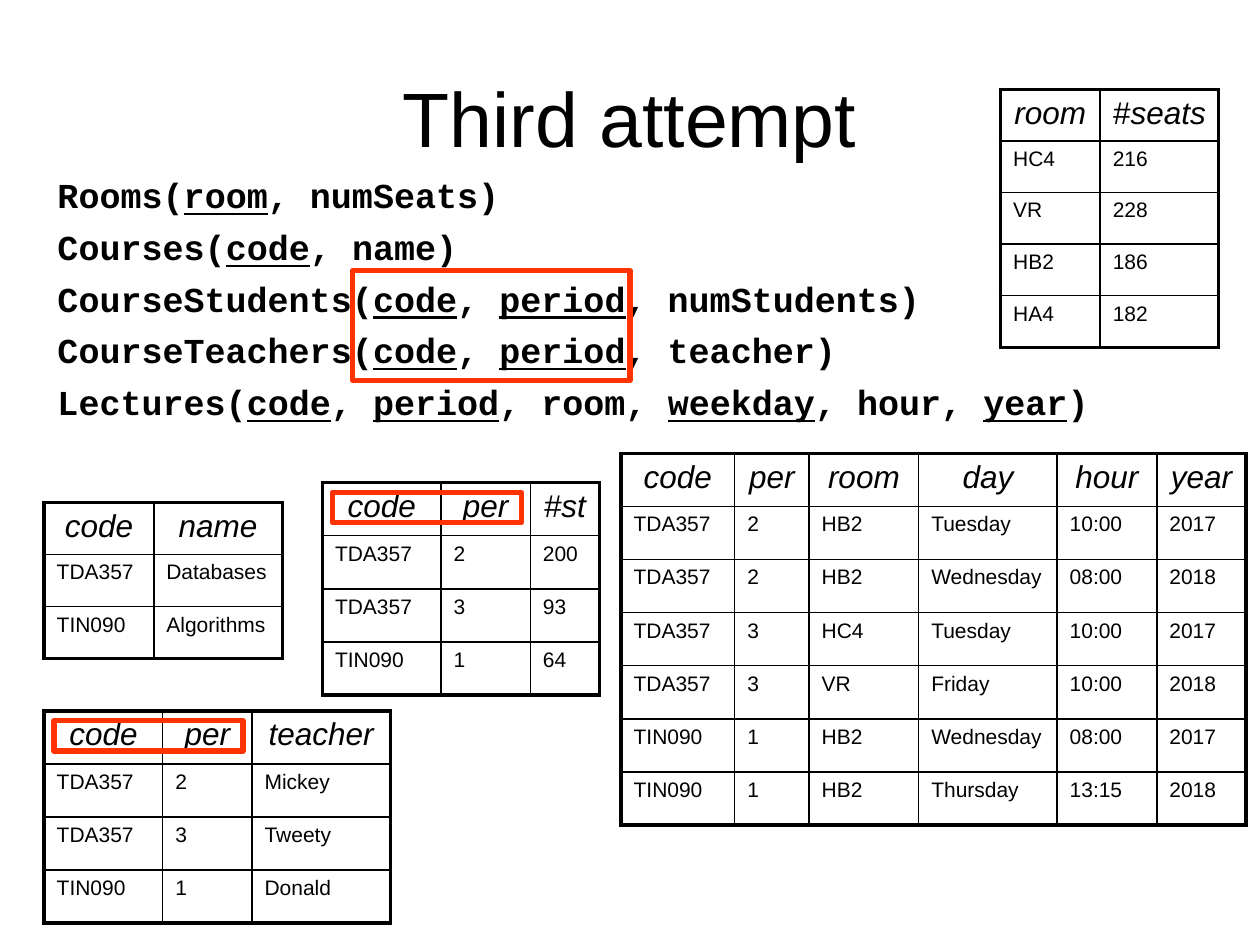
from lxml.etree import SubElement
from pptx import Presentation
from pptx.dml.color import RGBColor
from pptx.enum.shapes import MSO_SHAPE
from pptx.enum.text import MSO_ANCHOR, PP_ALIGN
from pptx.oxml.ns import qn
from pptx.util import Cm, Pt

BLACK = RGBColor(0x00, 0x00, 0x00)
RED = RGBColor(0xFF, 0x33, 0x00)
THIN, THICK = Pt(1), Pt(2.25)

SCHEMA = [
    "Rooms(_room_, numSeats)",
    "Courses(_code_, name)",
    "CourseStudents(_code_, _period_, numStudents)",
    "CourseTeachers(_code_, _period_, teacher)",
    "Lectures(_code_, _period_, room, _weekday_, hour, _year_)",
]

ROOMS = [
    ("_#_seats", ),
]
ROOMS = [
    ("room", "_#_seats"),
    ("HC4", "216"),
    ("VR", "228"),
    ("HB2", "186"),
    ("HA4", "182"),
]
COURSES = [
    ("code", "name"),
    ("TDA357", "Databases"),
    ("TIN090", "Algorithms"),
]
STUDENTS = [
    ("code", "per", "#st"),
    ("TDA357", "2", "200"),
    ("TDA357", "3", "93"),
    ("TIN090", "1", "64"),
]
TEACHERS = [
    ("code", "per", "teacher"),
    ("TDA357", "2", "Mickey"),
    ("TDA357", "3", "Tweety"),
    ("TIN090", "1", "Donald"),
]
LECTURES = [
    ("code", "per", "room", "day", "hour", "year"),
    ("TDA357", "2", "HB2", "Tuesday", "10:00", "2017"),
    ("TDA357", "2", "HB2", "Wednesday", "08:00", "2018"),
    ("TDA357", "3", "HC4", "Tuesday", "10:00", "2017"),
    ("TDA357", "3", "VR", "Friday", "10:00", "2018"),
    ("TIN090", "1", "HB2", "Wednesday", "08:00", "2017"),
    ("TIN090", "1", "HB2", "Thursday", "13:15", "2018"),
]


def add_run(paragraph, text, size, font_name="Arial", bold=False, italic=False, underline=False):
    run = paragraph.add_run()
    run.text = text
    font = run.font
    font.name, font.size, font.color.rgb = font_name, Pt(size), BLACK
    font.bold, font.italic, font.underline = bold, italic, underline


def split_marked(text):
    return [(part, index % 2 == 1) for index, part in enumerate(text.split("_")) if part]


def add_text_frame(slide, left, top, width, height):
    text_frame = slide.shapes.add_textbox(Cm(left), Cm(top), Cm(width), Cm(height)).text_frame
    text_frame.word_wrap = True
    return text_frame


def add_title(slide, left, top, width, height):
    text_frame = add_text_frame(slide, left, top, width, height)
    text_frame.vertical_anchor = MSO_ANCHOR.MIDDLE
    paragraph = text_frame.paragraphs[0]
    paragraph.alignment = PP_ALIGN.CENTER
    add_run(paragraph, "Third attempt", 44)


def add_schema(slide, left, top, width, height):
    text_frame = add_text_frame(slide, left, top, width, height)
    for index, relation in enumerate(SCHEMA):
        paragraph = text_frame.add_paragraph() if index else text_frame.paragraphs[0]
        paragraph.space_before = Pt(5.5)
        properties = paragraph._p.get_or_add_pPr()
        properties.set("marL", str(Cm(0.95)))
        properties.set("indent", str(Cm(-0.95)))
        for text, is_key in split_marked(relation):
            add_run(paragraph, text, 20, "Courier New", bold=True, underline=is_key)


def set_borders(cell, outer_sides):
    properties = cell._tc.get_or_add_tcPr()
    for side in "LRTB":
        line = SubElement(properties, qn(f"a:ln{side}"), w=str(THICK if side in outer_sides else THIN))
        fill = SubElement(line, qn("a:solidFill"))
        SubElement(fill, qn("a:srgbClr"), val=str(BLACK))


def add_key_mark(slide, left, top, width, height):
    shape = slide.shapes.add_shape(MSO_SHAPE.RECTANGLE, Cm(left), Cm(top), Cm(width), Cm(height))
    shape.shadow.inherit = False
    shape.fill.background()
    shape.line.color.rgb = RED
    shape.line.width = Pt(3)


def add_relation(slide, left, top, widths, row_height, rows):
    frame = slide.shapes.add_table(
        len(rows), len(widths), Cm(left), Cm(top), Cm(sum(widths)), Cm(row_height * len(rows)))
    table = frame.table
    table.first_row = table.horz_banding = False
    for column, width in zip(table.columns, widths):
        column.width = Cm(width)
    for row_index, values in enumerate(rows):
        table.rows[row_index].height = Cm(row_height)
        for column_index, value in enumerate(values):
            cell = table.cell(row_index, column_index)
            edges = {
                "L": column_index == 0,
                "R": column_index == len(widths) - 1,
                "T": row_index == 0,
                "B": row_index == len(rows) - 1,
            }
            set_borders(cell, [side for side, is_outer in edges.items() if is_outer])
            cell.fill.background()
            paragraph = cell.text_frame.paragraphs[0]
            is_header = row_index == 0
            paragraph.alignment = PP_ALIGN.CENTER if is_header else PP_ALIGN.LEFT
            for text, is_upright in split_marked(value):
                add_run(paragraph, text, 18 if is_header else 12, italic=is_header and not is_upright)


def add_keyed_relation(slide, left, top, widths, row_height, rows):
    add_relation(slide, left, top, widths, row_height, rows)
    add_key_mark(slide, left + 0.2, top + 0.2, 3.81, 0.61)


def main():
    presentation = Presentation()
    presentation.slide_width, presentation.slide_height = Cm(25.4), Cm(19.05)
    slide = presentation.slides.add_slide(presentation.slide_layouts[6])
    add_title(slide, 1.27, 0.76, 22.86, 3.18)
    add_schema(slide, 0.91, 3.38, 23.24, 5.49)
    add_relation(slide, 20.17, 1.8, [2.01, 2.39], 1.04, ROOMS)
    add_relation(slide, 0.89, 10.13, [2.21, 2.59], 1.05, COURSES)
    add_keyed_relation(slide, 6.5, 9.73, [2.39, 1.8, 1.4], 1.07, STUDENTS)
    add_keyed_relation(slide, 0.89, 14.33, [2.39, 1.8, 2.79], 1.07, TEACHERS)
    add_relation(slide, 12.52, 9.14, [2.29, 1.5, 2.21, 2.79, 2.01, 1.8], 1.07, LECTURES)
    add_key_mark(slide, 7.11, 5.46, 5.59, 2.21)
    presentation.save("out.pptx")


if __name__ == "__main__":
    main()
